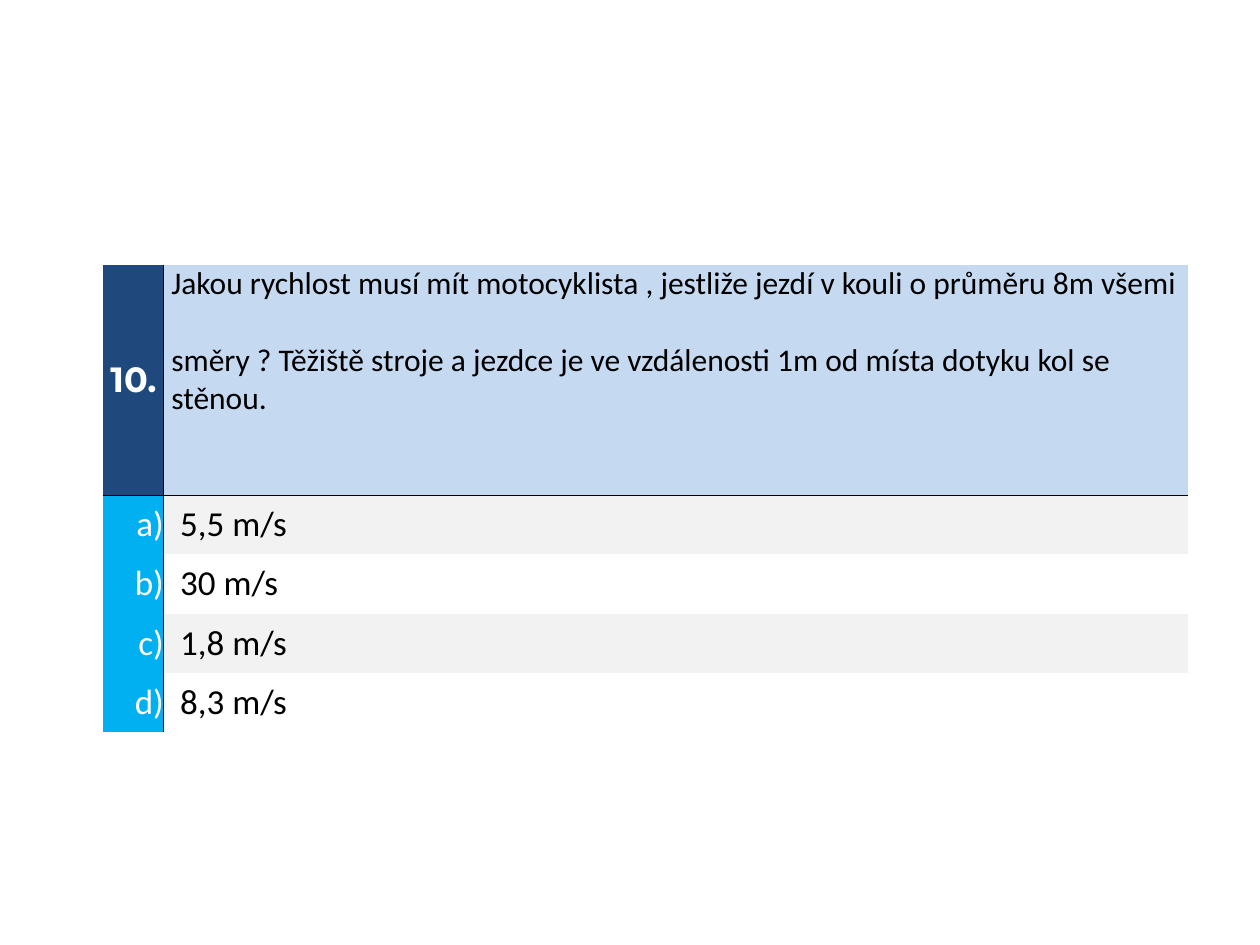
from lxml import etree
from pptx import Presentation, util as u
from pptx.dml.color import RGBColor
from pptx.enum import text
from pptx.oxml import ns

NAVY = RGBColor(0x1F, 0x49, 0x7D)
PALE_BLUE = RGBColor(0xC5, 0xD9, 0xF1)
CYAN = RGBColor(0x00, 0xB0, 0xF0)
GREY = RGBColor(0xF2, 0xF2, 0xF2)
WHITE = RGBColor(0xFF, 0xFF, 0xFF)
BLACK = RGBColor(0x00, 0x00, 0x00)

QUESTION = [
    "Jakou rychlost musí mít motocyklista , jestliže jezdí v\u00a0kouli o průměru 8m všemi",
    "směry ? Těžiště stroje a jezdce je ve vzdálenosti 1m od místa dotyku kol se stěnou.",
]
ANSWERS = ["5,5 m/s", "30 m/s", "1,8 m/s", "8,3 m/s"]
COLUMNS = [0.48, 8.13]
ROWS = [1.83] + [0.47] * len(ANSWERS)


def set_borders(cell, visible):
    tc_pr = cell._tc.get_or_add_tcPr()
    for side in "LRTB":
        ln = etree.SubElement(tc_pr, ns.qn("a:ln" + side), w=str(u.Pt(0.5)))
        if side in visible:
            fill = etree.SubElement(ln, ns.qn("a:solidFill"))
            etree.SubElement(fill, ns.qn("a:srgbClr"), val=str(BLACK))
        else:
            etree.SubElement(ln, ns.qn("a:noFill"))


def fill_cell(cell, lines, size, color, fill, borders, align=text.PP_ALIGN.LEFT,
              indent=0, anchor=text.MSO_ANCHOR.MIDDLE, font="Calibri", bold=False):
    set_borders(cell, borders)
    if fill is None:
        cell.fill.background()
    else:
        cell.fill.solid()
        cell.fill.fore_color.rgb = fill
    cell.margin_left = u.Inches(indent)
    cell.margin_right = cell.margin_top = cell.margin_bottom = 0
    cell.vertical_anchor = anchor
    tf = cell.text_frame
    tf.text = "\n".join(lines)
    for i, p in enumerate(tf.paragraphs):
        p.alignment = align
        if i:
            p.space_before = u.Pt(22)
        p.font.name, p.font.size, p.font.bold = font, u.Pt(size), bold
        p.font.color.rgb = color


prs = Presentation()
prs.slide_width, prs.slide_height = u.Inches(10), u.Inches(7.5)
s = prs.slides.add_slide(prs.slide_layouts[6])

table = s.shapes.add_table(len(ROWS), len(COLUMNS), u.Inches(0.82), u.Inches(2.1),
                           u.Inches(sum(COLUMNS)), u.Inches(sum(ROWS))).table
table.first_row = table.horz_banding = False
for column, width in zip(table.columns, COLUMNS):
    column.width = u.Inches(width)
for row, height in zip(table.rows, ROWS):
    row.height = u.Inches(height)

fill_cell(table.cell(0, 0), ["10."], 20, WHITE, NAVY, "RB",
          align=text.PP_ALIGN.CENTER, font="Montserrat", bold=True)
fill_cell(table.cell(0, 1), QUESTION, 18, BLACK, PALE_BLUE, "LB",
          indent=0.06, anchor=text.MSO_ANCHOR.TOP)

for i, (letter, answer) in enumerate(zip("abcd", ANSWERS), start=1):
    top = "T" if i == 1 else ""
    fill_cell(table.cell(i, 0), [letter + ")"], 20, WHITE, CYAN, "R" + top,
              align=text.PP_ALIGN.RIGHT)
    fill_cell(table.cell(i, 1), [answer], 20, BLACK, GREY if i % 2 else None, "L" + top,
              indent=0.13)

prs.save("out.pptx")
